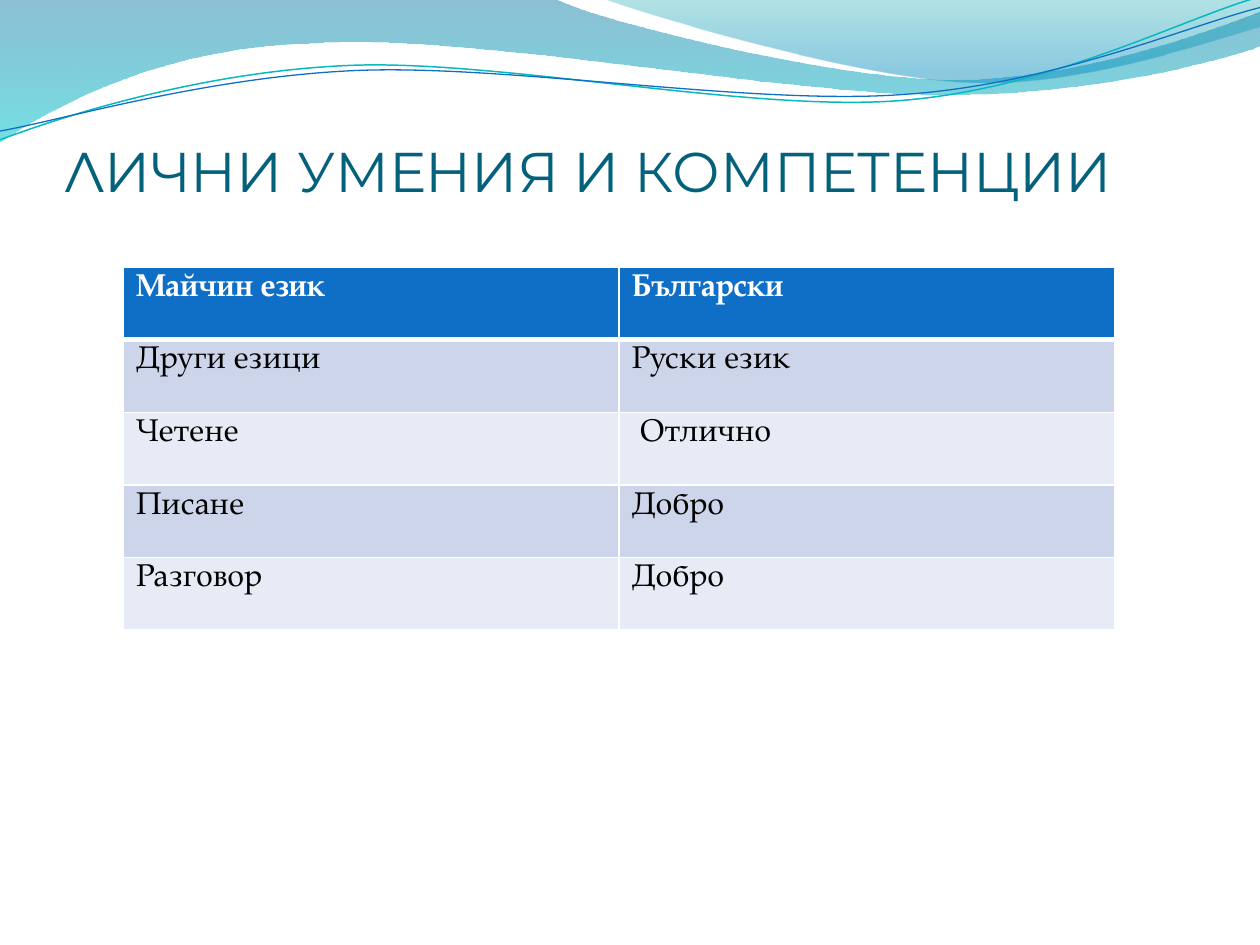
import pptx
import pptx.dml.color
import pptx.enum.lang
import pptx.enum.text
import pptx.oxml
import pptx.oxml.ns
import pptx.util

EMU_PER_PX = 9144

WHITE = pptx.dml.color.RGBColor(0xFF, 0xFF, 0xFF)
BLACK = pptx.dml.color.RGBColor(0x00, 0x00, 0x00)
TITLE_TEAL = pptx.dml.color.RGBColor(0x04, 0x61, 0x7B)
BLUE = pptx.dml.color.RGBColor(0x0F, 0x6F, 0xC6)
LINE_TEAL = pptx.dml.color.RGBColor(0x0A, 0xB8, 0xBF)
DEEP_BLUE = pptx.dml.color.RGBColor(0x00, 0x74, 0xA1)
AQUA = pptx.dml.color.RGBColor(0x00, 0xC6, 0xCF)
SEA_GREEN = pptx.dml.color.RGBColor(0x00, 0xA1, 0xA9)
SKY_BLUE = pptx.dml.color.RGBColor(0x00, 0x8B, 0xBF)
BAND_DARK = pptx.dml.color.RGBColor(0xCC, 0xD5, 0xEA)
BAND_LIGHT = pptx.dml.color.RGBColor(0xE7, 0xEB, 0xF5)

BROAD_WAVE = [
    [(0, 0)], [(441, 0)],
    [(477, 18), (665, 64), (759, 64)], [(854, 64), (959, 27), (1001, 10)],
    [(1002, 37)],
    [(984, 45), (871, 77), (747, 76)], [(623, 76), (383, 29), (258, 35)],
    [(130, 37), (47, 84), (0, 114)],
]
RIGHT_WAVE = [
    [(0, 0)],
    [(30, 12), (203, 63), (290, 66)], [(377, 70), (482, 33), (521, 22)],
    [(521, 0)],
]
TEAL_CURVE = [
    [(0, 113)],
    [(48, 95), (158, 59), (277, 54)], [(395, 49), (593, 91), (713, 82)],
    [(833, 73), (938, 17), (998, 0)],
]
BLUE_CURVE = [
    [(0, 98)],
    [(47, 90), (164, 55), (283, 50)], [(403, 45), (597, 78), (717, 69)],
    [(836, 61), (941, 15), (1000, 0)],
]
LANGUAGE_ROWS = [
    ("Майчин език", "Български"),
    ("Други езици", "Руски език"),
    ("Четене", " Отлично"),
    ("Писане", "Добро"),
    ("Разговор", "Добро"),
]


def px(length):
    return pptx.util.Emu(length * EMU_PER_PX)


def bend_segments(shape, segments):
    line_elements = list(shape._element.iter(pptx.oxml.ns.qn("a:lnTo")))
    for segment in segments:
        group, line_elements = line_elements[:len(segment)], line_elements[len(segment):]
        if len(group) == 3:
            curve = pptx.oxml.parse_xml(
                f'<a:cubicBezTo {pptx.oxml.ns.nsdecls("a")}/>')
            group[0].addprevious(curve)
            for element in group:
                curve.append(element[0])
                element.getparent().remove(element)


def add_outline(slide, left, top, segments, closed):
    vertices = [(px(left + x), px(top + y)) for segment in segments for x, y in segment]
    builder = slide.shapes.build_freeform(*vertices[0])
    builder.add_line_segments(vertices[1:], close=closed)
    shape = builder.convert_to_shape()
    shape.shadow.inherit = False
    bend_segments(shape, segments[1:])
    return shape


def add_wave(slide, left, top, segments, stops):
    shape = add_outline(slide, left, top, segments, True)
    shape.line.fill.background()
    shape.fill.gradient()
    shape.fill.gradient_angle = 270
    for gradient_stop, (position, color, opacity) in zip(shape.fill.gradient_stops, stops):
        gradient_stop.position = position
        gradient_stop.color.rgb = color
    color_elements = shape._element.spPr.iter(pptx.oxml.ns.qn("a:srgbClr"))
    for element, (position, color, opacity) in zip(color_elements, stops):
        alpha = pptx.oxml.parse_xml(
            f'<a:alpha {pptx.oxml.ns.nsdecls("a")} val="{opacity * 1000}"/>')
        element.append(alpha)


def add_curve(slide, left, top, segments, color, width):
    shape = add_outline(slide, left, top, segments, False)
    shape.fill.background()
    shape.line.color.rgb = color
    shape.line.width = pptx.util.Pt(width)


def add_header_waves(slide, left, top):
    add_wave(slide, left, top, BROAD_WAVE, [(0, DEEP_BLUE, 45), (1, AQUA, 55)])
    add_wave(slide, left + 480, top, RIGHT_WAVE, [(0, SEA_GREEN, 30), (0.8, SKY_BLUE, 45)])
    add_curve(slide, left + 1, top - 1, TEAL_CURVE, LINE_TEAL, 0.85)
    add_curve(slide, left + 1, top + 7, BLUE_CURVE, BLUE, 0.75)


def add_title(slide, left, top, width, height):
    shape = slide.shapes.add_textbox(px(left), px(top), px(width), px(height))
    frame = shape.text_frame
    frame.word_wrap = True
    frame.vertical_anchor = pptx.enum.text.MSO_ANCHOR.BOTTOM
    frame.margin_left = frame.margin_right = frame.margin_bottom = 0
    frame.margin_top = px(5)
    paragraph = frame.paragraphs[0]
    paragraph.text = "ЛИЧНИ УМЕНИЯ И КОМПЕТЕНЦИИ"
    paragraph.font.name = "Montserrat"
    paragraph.font.size = pptx.util.Pt(32)
    paragraph.font.color.rgb = TITLE_TEAL
    paragraph.runs[0].font.language_id = pptx.enum.lang.MSO_LANGUAGE_ID.BULGARIAN


def set_borders(cell, widths):
    properties = cell._tc.get_or_add_tcPr()
    for index, (side, width) in enumerate(widths.items()):
        border = pptx.oxml.parse_xml(
            f'<a:ln{side} {pptx.oxml.ns.nsdecls("a")} w="{pptx.util.Pt(width)}">'
            f'<a:solidFill><a:srgbClr val="{WHITE}"/></a:solidFill></a:ln{side}>')
        properties.insert(index, border)


def add_language_table(slide, left, top, width, height):
    frame = slide.shapes.add_table(
        len(LANGUAGE_ROWS), 2, px(left), px(top), px(width), px(height))
    for row_index, labels in enumerate(LANGUAGE_ROWS):
        is_header = row_index == 0
        band = BAND_DARK if row_index % 2 else BAND_LIGHT
        for column_index, label in enumerate(labels):
            cell = frame.table.cell(row_index, column_index)
            cell.fill.solid()
            cell.fill.fore_color.rgb = BLUE if is_header else band
            set_borders(cell, {
                "L": 1, "R": 1,
                "T": 3 if row_index == 1 else 1,
                "B": 3 if is_header else 1,
            })
            paragraph = cell.text_frame.paragraphs[0]
            paragraph.text = label
            paragraph.font.name = "TeX Gyre Pagella"
            paragraph.font.size = pptx.util.Pt(18)
            paragraph.font.bold = is_header
            paragraph.font.color.rgb = WHITE if is_header else BLACK


def main():
    presentation = pptx.Presentation()
    presentation.slide_width = px(1000)
    presentation.slide_height = px(750)
    slide = presentation.slides.add_slide(presentation.slide_layouts[6])
    add_header_waves(slide, -1, -1)
    add_title(slide, 51, 77, 929, 85)
    add_language_table(slide, 98, 212, 787, 288)
    presentation.save("out.pptx")


if __name__ == "__main__":
    main()
